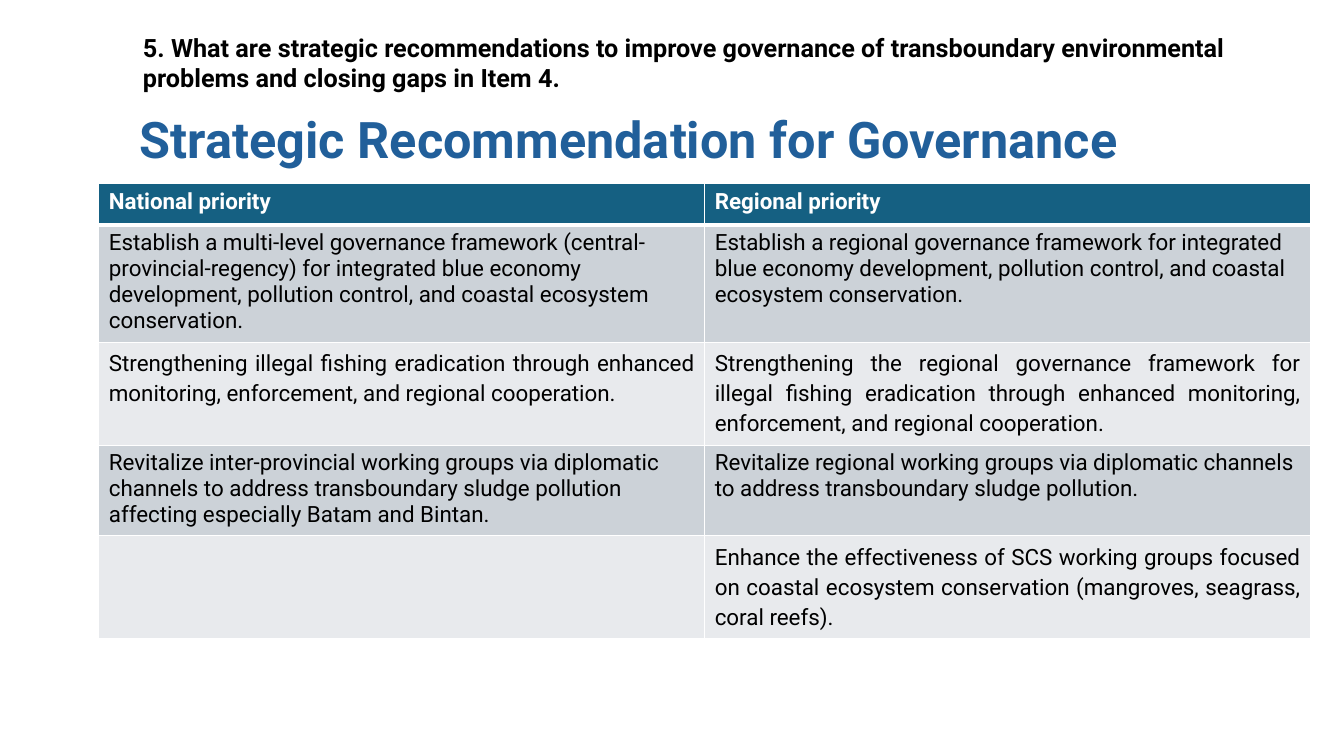
import pptx
import pptx.util
import pptx.dml.color
import pptx.enum.text
import pptx.oxml
import pptx.oxml.ns

Inches = pptx.util.Inches
Pt = pptx.util.Pt
RGBColor = pptx.dml.color.RGBColor

BLACK = RGBColor(0x00, 0x00, 0x00)
WHITE = RGBColor(0xFF, 0xFF, 0xFF)
TITLE_BLUE = RGBColor(0x21, 0x5F, 0x9A)
HEADER_TEAL = RGBColor(0x15, 0x60, 0x82)
BAND_DARK = RGBColor(0xCC, 0xD2, 0xD8)
BAND_LIGHT = RGBColor(0xE8, 0xEA, 0xED)
FONT = "Roboto"

PRIORITIES = [
    ("National priority", "Regional priority"),
    ("Establish a multi-level governance framework (central-provincial-regency) for "
     "integrated blue economy development, pollution control, and coastal ecosystem "
     "conservation.",
     "Establish a regional governance framework for integrated blue economy "
     "development, pollution control, and coastal ecosystem conservation."),
    ("Strengthening illegal fishing eradication through enhanced monitoring, "
     "enforcement, and regional cooperation.",
     "Strengthening the regional governance framework for illegal fishing eradication "
     "through enhanced monitoring, enforcement, and regional cooperation."),
    ("Revitalize inter-provincial working groups via diplomatic channels to address "
     "transboundary sludge pollution affecting especially Batam and Bintan.",
     "Revitalize regional working groups via diplomatic channels to address "
     "transboundary sludge pollution."),
    ("",
     "Enhance the effectiveness of SCS working groups focused on coastal ecosystem "
     "conservation (mangroves, seagrass, coral reefs)."),
]


def add_run(p, text, size, color, bold):
    r = p.add_run()
    r.text = text
    r.font.name = FONT
    r.font.size = Pt(size)
    r.font.bold = bold
    r.font.color.rgb = color


def add_heading(s, box, text, size, color, line_spacing=1.0):
    tf = s.shapes.add_textbox(*map(Inches, box)).text_frame
    tf.word_wrap = True
    p = tf.paragraphs[0]
    p.line_spacing = line_spacing
    add_run(p, text, size, color, True)


def set_borders(cell, bottom_width):
    tc_pr = cell._tc.get_or_add_tcPr()
    widths = {"lnL": 1, "lnR": 1, "lnT": 1, "lnB": bottom_width}
    for i, (side, width) in enumerate(widths.items()):
        tc_pr.insert(i, pptx.oxml.parse_xml(
            f'<a:{side} {pptx.oxml.ns.nsdecls("a")} w="{Pt(width)}">'
            f'<a:solidFill><a:srgbClr val="{WHITE}"/></a:solidFill></a:{side}>'))


def add_priority_table(s, box):
    left, top, width, height = map(Inches, box)
    frame = s.shapes.add_table(len(PRIORITIES), 2, left, top, width, height)
    table = frame.table
    for i, row in enumerate(PRIORITIES):
        header = i == 0
        light = not header and i % 2 == 0
        # Rows grow to fit their text
        table.rows[i].height = Inches(0.41)
        for j, text in enumerate(row):
            cell = table.cell(i, j)
            cell.fill.solid()
            cell.fill.fore_color.rgb = (
                HEADER_TEAL if header else BAND_LIGHT if light else BAND_DARK)
            set_borders(cell, 3 if header else 1)
            if not text:
                continue
            p = cell.text_frame.paragraphs[0]
            if light:
                p.alignment = pptx.enum.text.PP_ALIGN.JUSTIFY
                p.line_spacing = 1.15
                p.space_after = Pt(8)
            add_run(p, text, 16, WHITE if header else BLACK, header)
    frame.height = height


def main():
    prs = pptx.Presentation()
    prs.slide_width = Inches(13.33)
    prs.slide_height = Inches(7.5)
    s = prs.slides.add_slide(prs.slide_layouts[6])

    # Title and the question it answers
    add_heading(s, (1.29, 1.09, 11.5, 1.45),
                "Strategic Recommendation for Governance", 36, TITLE_BLUE, 0.9)
    add_heading(s, (1.32, 0.27, 11.23, 0.71),
                "5. What are strategic recommendations to improve governance of "
                "transboundary environmental problems and closing gaps in Item 4.",
                18, BLACK)

    # National and regional priorities
    add_priority_table(s, (0.98, 1.82, 12.02, 4.48))
    prs.save("out.pptx")


if __name__ == "__main__":
    main()
